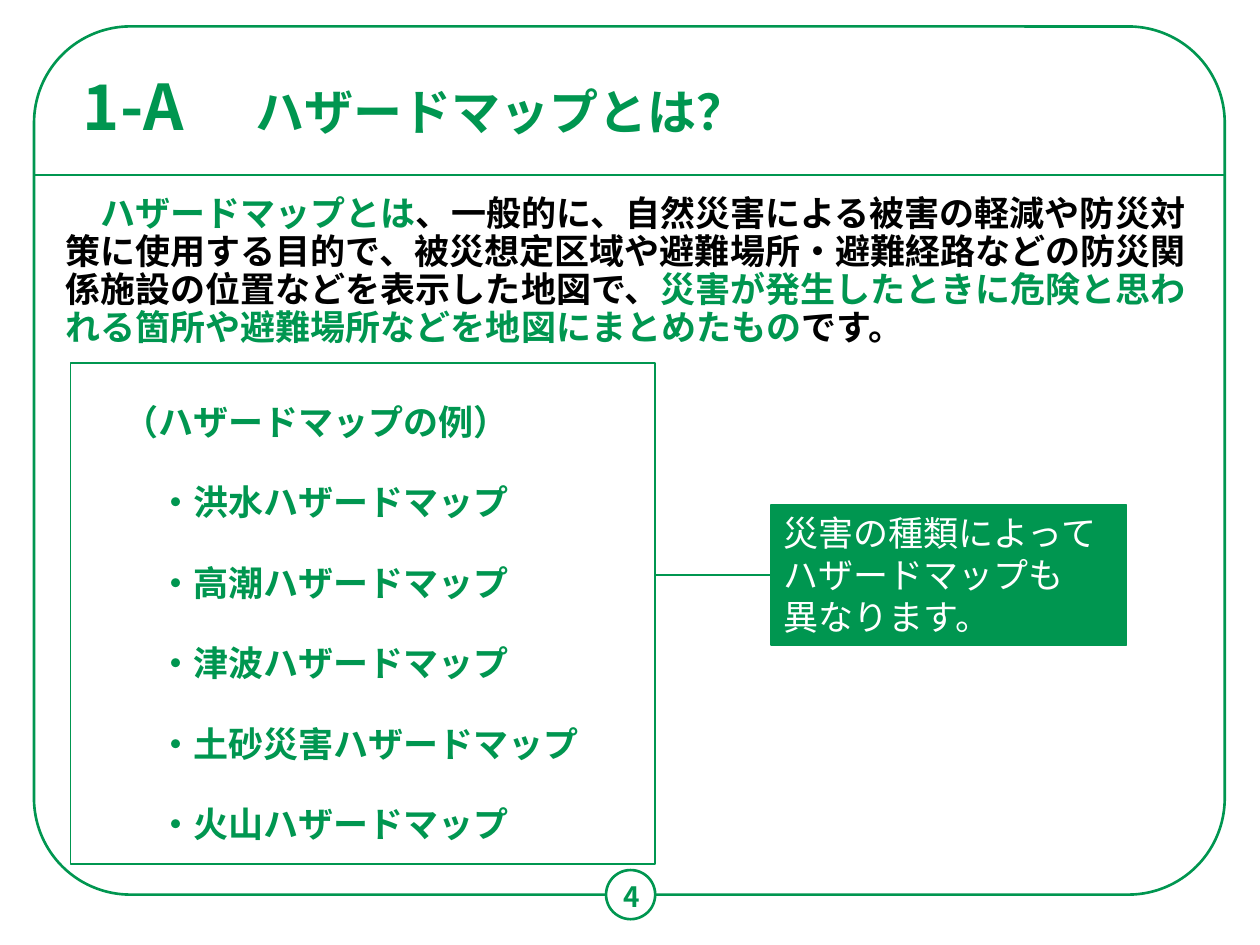
import collections

import lxml.etree
import pptx
import pptx.dml.color
import pptx.enum.shapes
import pptx.enum.text
import pptx.oxml.ns
import pptx.util

GREEN = pptx.dml.color.RGBColor(0x00, 0x96, 0x50)
BLACK = pptx.dml.color.RGBColor(0x00, 0x00, 0x00)
WHITE = pptx.dml.color.RGBColor(0xFF, 0xFF, 0xFF)
FONT = "Noto Sans CJK JP"
CELL = pptx.util.Inches(0.1)  # the slide is a grid of 100 columns by 75 rows
COLUMNS, ROWS = 100, 75
EM = pptx.util.Pt(20)  # one full-width character of body text

SHAPE = pptx.enum.shapes.MSO_SHAPE
ANCHOR = pptx.enum.text.MSO_ANCHOR
ALIGN = pptx.enum.text.PP_ALIGN
Box = collections.namedtuple("Box", "left top width height")


def inside(box, left, top, width, height):
    """Return a box offset from the corner of another one."""
    return Box(box.left + left, box.top + top, width, height)


def emu(*cells):
    return [round(value * CELL) for value in cells]


def add_span(para, text, size=20, color=GREEN, bold=True):
    span = para.add_run()
    span.text = text
    span.font.size = pptx.util.Pt(size)
    span.font.bold = bold
    span.font.name = FONT
    span.font.color.rgb = color
    east_asian = lxml.etree.SubElement(span.font._element, pptx.oxml.ns.qn("a:ea"))
    east_asian.set("typeface", FONT)


def add_text(page, box, anchor=ANCHOR.TOP):
    frame = page.shapes.add_textbox(*emu(*box)).text_frame
    frame.word_wrap = True
    frame.vertical_anchor = anchor
    return frame


def add_shape(page, kind, box, fill=None, width=1.5):
    shape = page.shapes.add_shape(kind, *emu(*box))
    shape.shadow.inherit = False
    if fill is None:
        shape.fill.background()
    else:
        shape.fill.solid()
        shape.fill.fore_color.rgb = fill
    shape.line.color.rgb = GREEN
    shape.line.width = pptx.util.Pt(width)
    return shape


def add_rule(page, left, right, height):
    rule = page.shapes.add_connector(
        pptx.enum.shapes.MSO_CONNECTOR.STRAIGHT, *emu(left, height, right, height))
    rule.line.color.rgb = GREEN
    rule.line.width = pptx.util.Pt(1.5)
    lxml.etree.SubElement(rule._element.spPr, pptx.oxml.ns.qn("a:effectLst"))


def build_frame(page, box, number):
    """Rounded border, rule under the heading and page number badge."""
    border = add_shape(page, SHAPE.ROUNDED_RECTANGLE, box)
    border.adjustments[0] = 0.111
    badge = 3.9
    add_shape(page, SHAPE.OVAL,
              inside(box, 45.4, box.height - badge / 2, badge, badge), WHITE)
    add_rule(page, box.left, box.left + box.width, box.top + 11.8)
    frame = add_text(page, inside(box, 43.5, box.height - 1.8, 7.9, badge), ANCHOR.MIDDLE)
    para = frame.paragraphs[0]
    para.alignment = ALIGN.CENTER
    add_span(para, number, 16)


def build_heading(page, box, section, heading):
    """Section number beside the title."""
    title = page.shapes.title
    title.left, title.top, title.width, title.height = emu(
        *inside(box, 13.7, 0.3, 41.3, 5.4))
    title.text_frame.word_wrap = False
    title.text_frame.vertical_anchor = ANCHOR.BOTTOM
    label = add_text(page, inside(box, 0, 0, 13.8, box.height), ANCHOR.BOTTOM)
    for frame, text, size in ((title.text_frame, heading, 28), (label, section, 36)):
        para = frame.paragraphs[0]
        para.alignment = ALIGN.LEFT
        para.line_spacing = 0.9
        add_span(para, text, size)


def build_definition(page, box, spans):
    """Paragraph with an indented first line and coloured key phrases."""
    para = add_text(page, box).paragraphs[0]
    para.line_spacing = 0.9
    para._p.get_or_add_pPr().set("indent", str(EM))
    for text, color in spans:
        add_span(para, text, color=color)


def build_examples(page, box, heading, examples):
    """Outlined panel with a heading and its list."""
    add_shape(page, SHAPE.RECTANGLE, box, WHITE, 1)
    frame = add_text(page, inside(box, 3.2, 0.8, 40.4, 38.6))
    para = frame.paragraphs[0]
    para.line_spacing = 1.5
    add_span(para, heading)
    for example in examples:
        para = frame.add_paragraph()
        para.line_spacing = 1.5
        para.space_before = pptx.util.Pt(10)
        para._p.get_or_add_pPr().set("marL", str(EM))
        add_span(para, "・" + example)


def build_callout(page, box, start, lines):
    """Filled note joined to the panel on its left."""
    note = add_shape(page, SHAPE.RECTANGLE, box, GREEN, 1)
    frame = note.text_frame
    frame.word_wrap = True
    frame.vertical_anchor = ANCHOR.TOP
    for index, line in enumerate(lines):
        para = frame.add_paragraph() if index else frame.paragraphs[0]
        para.alignment = ALIGN.LEFT
        add_span(para, line, color=WHITE, bold=False)
    add_rule(page, start, box.left, box.top + box.height / 2)


def main():
    deck = pptx.Presentation()
    deck.slide_width, deck.slide_height = emu(COLUMNS, ROWS)
    page = deck.slides.add_slide(deck.slide_layouts.get_by_name("Title Only"))
    panel = Box(5.6, 28.8, 46.4, 39.8)

    build_frame(page, Box(2.7, 2.1, 94.5, 68.9), "4")
    build_heading(page, Box(5.6, 6, 55, 5.9), "1-A", "ハザードマップとは？")
    build_definition(page, Box(4.2, 15.1, 91.5, 13), [
        ("ハザードマップとは", GREEN),
        ("、一般的に、自然災害による被害の軽減や防災対策に使用する目的で、"
         "被災想定区域や避難場所・避難経路などの防災関係施設の位置などを"
         "表示した地図で、", BLACK),
        ("災害が発生したときに危険と思われる箇所や避難場所などを"
         "地図にまとめたもの", GREEN),
        ("です。", BLACK),
    ])
    build_examples(page, panel, "（ハザードマップの例）", [
        kind + "ハザードマップ" for kind in ("洪水", "高潮", "津波", "土砂災害", "火山")])
    build_callout(page, Box(61.2, 40.1, 28.2, 11.1), panel.left + panel.width,
                  ["災害の種類によってハザードマップも", "異なります。"])
    deck.save("out.pptx")


if __name__ == "__main__":
    main()
